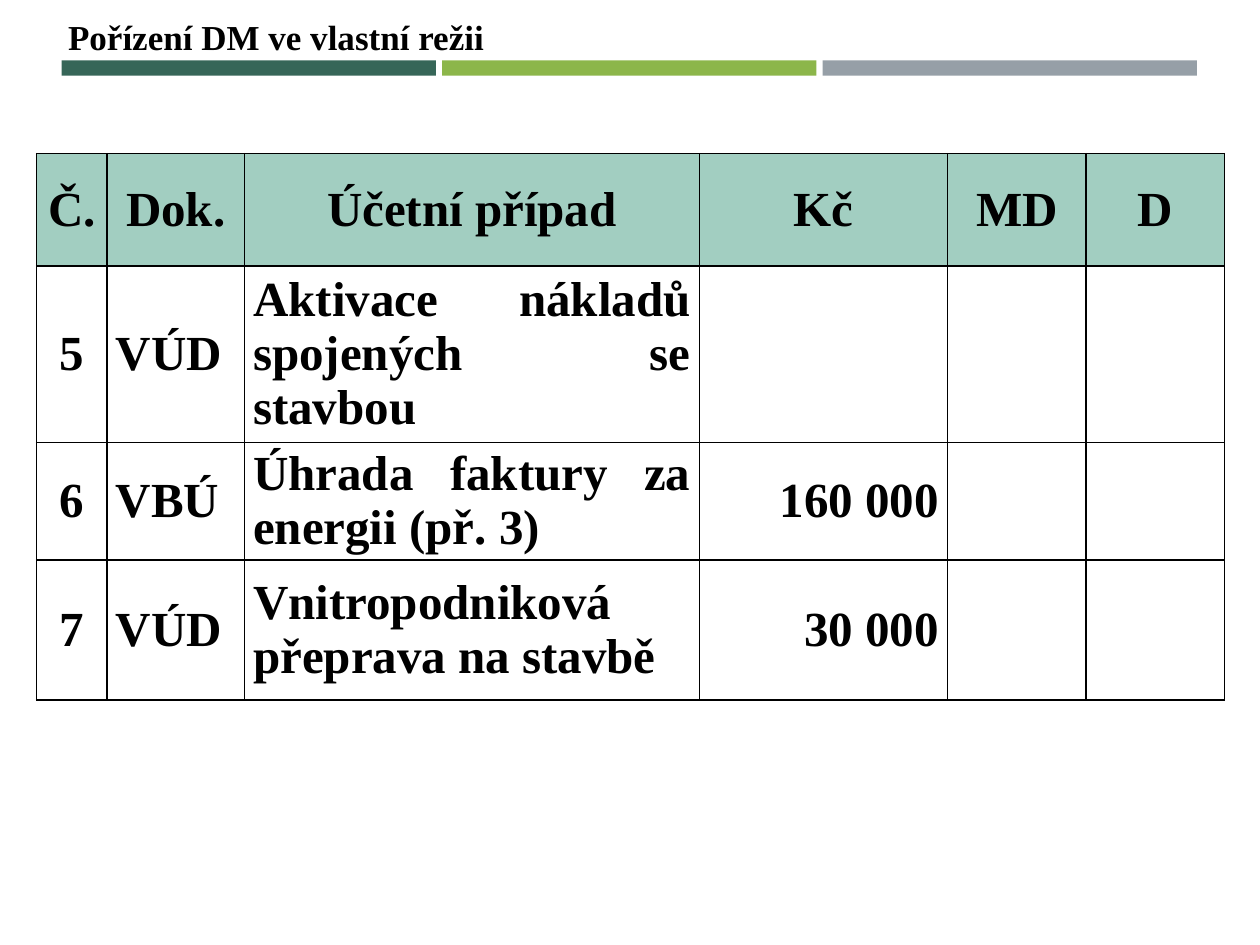
from dataclasses import dataclass

from lxml.etree import SubElement
from pptx import Presentation
from pptx.dml.color import RGBColor
from pptx.enum.shapes import MSO_SHAPE
from pptx.enum.text import MSO_ANCHOR, MSO_AUTO_SIZE, PP_ALIGN
from pptx.oxml.ns import qn
from pptx.util import Inches, Pt


@dataclass(frozen=True)
class Theme:
    font: str = "Times New Roman"
    title_size: int = 20
    table_size: int = 28
    border_width: int = 1
    ink: str = "000000"
    header: str = "A2CEC1"
    bars: tuple = ("366658", "8CB64A", "969FA7")


THEME = Theme()
TITLE_ONLY = 5
COLUMN_WIDTHS = (0.56, 1.09, 3.61, 1.97, 1.1, 1.1)
ROW_HEIGHTS = (0.89, 1.4, 0.93, 1.11)
COLUMN_ALIGN = (PP_ALIGN.CENTER, PP_ALIGN.LEFT, PP_ALIGN.JUSTIFY,
                PP_ALIGN.RIGHT, PP_ALIGN.CENTER, PP_ALIGN.CENTER)
ENTRIES = (
    ("Č.", "Dok.", "Účetní případ", "Kč", "MD", "D"),
    ("5", "VÚD", "Aktivace nákladů spojených se stavbou", "", "", ""),
    ("6", "VBÚ", "Úhrada faktury za energii (př. 3)", "160 000", "", ""),
    ("7", "VÚD", "Vnitropodniková přeprava na stavbě", "30 000", "", ""),
)


def add_run(p, text, size):
    r = p.add_run()
    r.text = text
    r.font.name = THEME.font
    r.font.size = Pt(size)
    r.font.bold = True
    r.font.color.rgb = RGBColor.from_string(THEME.ink)


def add_bars(slide, left=0.49, top=0.48, width=2.97, height=0.12, gap=0.05):
    for i, color in enumerate(THEME.bars):
        bar = slide.shapes.add_shape(
            MSO_SHAPE.RECTANGLE, Inches(left + i * (width + gap)), Inches(top),
            Inches(width), Inches(height))
        bar.shadow.inherit = False
        bar.fill.solid()
        bar.fill.fore_color.rgb = RGBColor.from_string(color)
        bar.line.fill.background()


def set_title(slide, text):
    title = slide.shapes.title
    title.left, title.top = Inches(0.44), Inches(0.07)
    title.width, title.height = Inches(3.53), Inches(0.44)
    tf = title.text_frame
    tf.word_wrap = False
    tf.auto_size = MSO_AUTO_SIZE.SHAPE_TO_FIT_TEXT
    tf.vertical_anchor = MSO_ANCHOR.TOP
    p = tf.paragraphs[0]
    p.alignment = PP_ALIGN.LEFT
    add_run(p, text, THEME.title_size)


def add_borders(cell):
    """Line all four sides; call before the fill, which must follow the lines."""
    tc_pr = cell._tc.get_or_add_tcPr()
    for side in ("a:lnL", "a:lnR", "a:lnT", "a:lnB"):
        ln = SubElement(tc_pr, qn(side), w=str(Pt(THEME.border_width)))
        fill = SubElement(ln, qn("a:solidFill"))
        SubElement(fill, qn("a:srgbClr"), val=THEME.ink)


def format_cell(cell, text, align, is_header):
    add_borders(cell)
    if is_header:
        cell.fill.solid()
        cell.fill.fore_color.rgb = RGBColor.from_string(THEME.header)
    else:
        cell.fill.background()
    cell.vertical_anchor = MSO_ANCHOR.MIDDLE
    cell.margin_left = cell.margin_right = Inches(0.07)
    cell.margin_top = cell.margin_bottom = 0
    if text:
        p = cell.text_frame.paragraphs[0]
        p.alignment = PP_ALIGN.CENTER if is_header else align
        add_run(p, text, THEME.table_size)


def add_journal(slide):
    table = slide.shapes.add_table(
        len(ROW_HEIGHTS), len(COLUMN_WIDTHS), Inches(0.29), Inches(1.22),
        Inches(sum(COLUMN_WIDTHS)), Inches(sum(ROW_HEIGHTS))).table
    table.first_row = table.horz_banding = False
    for column, width in zip(table.columns, COLUMN_WIDTHS):
        column.width = Inches(width)
    for i, (row, height, entry) in enumerate(zip(table.rows, ROW_HEIGHTS, ENTRIES)):
        row.height = Inches(height)
        for cell, text, align in zip(row.cells, entry, COLUMN_ALIGN):
            format_cell(cell, text, align, is_header=i == 0)


def main():
    prs = Presentation()
    prs.slide_width, prs.slide_height = Inches(10), Inches(7.5)
    slide = prs.slides.add_slide(prs.slide_layouts[TITLE_ONLY])
    add_bars(slide)
    set_title(slide, "Pořízení DM ve vlastní režii")
    add_journal(slide)
    prs.save("out.pptx")


if __name__ == "__main__":
    main()
